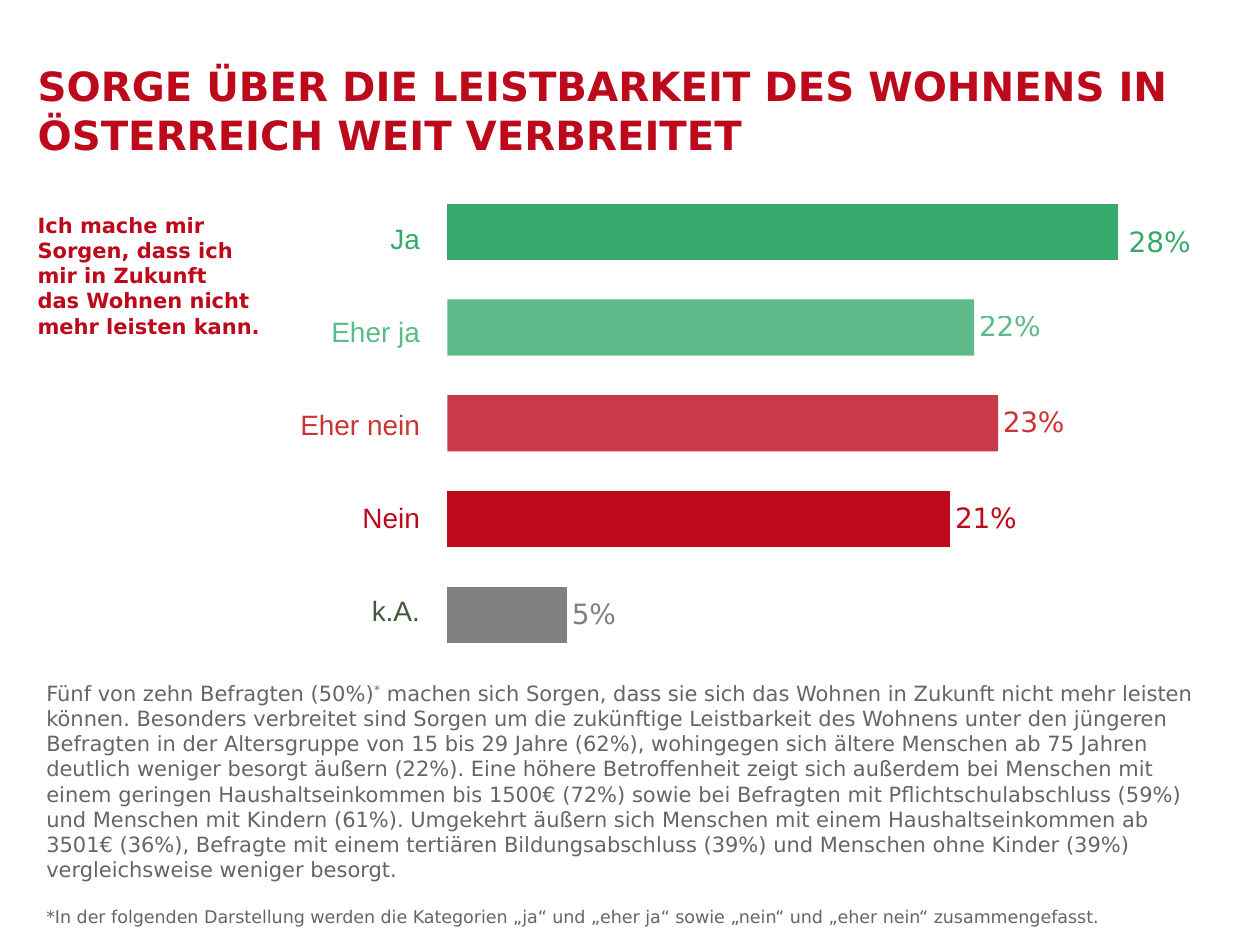
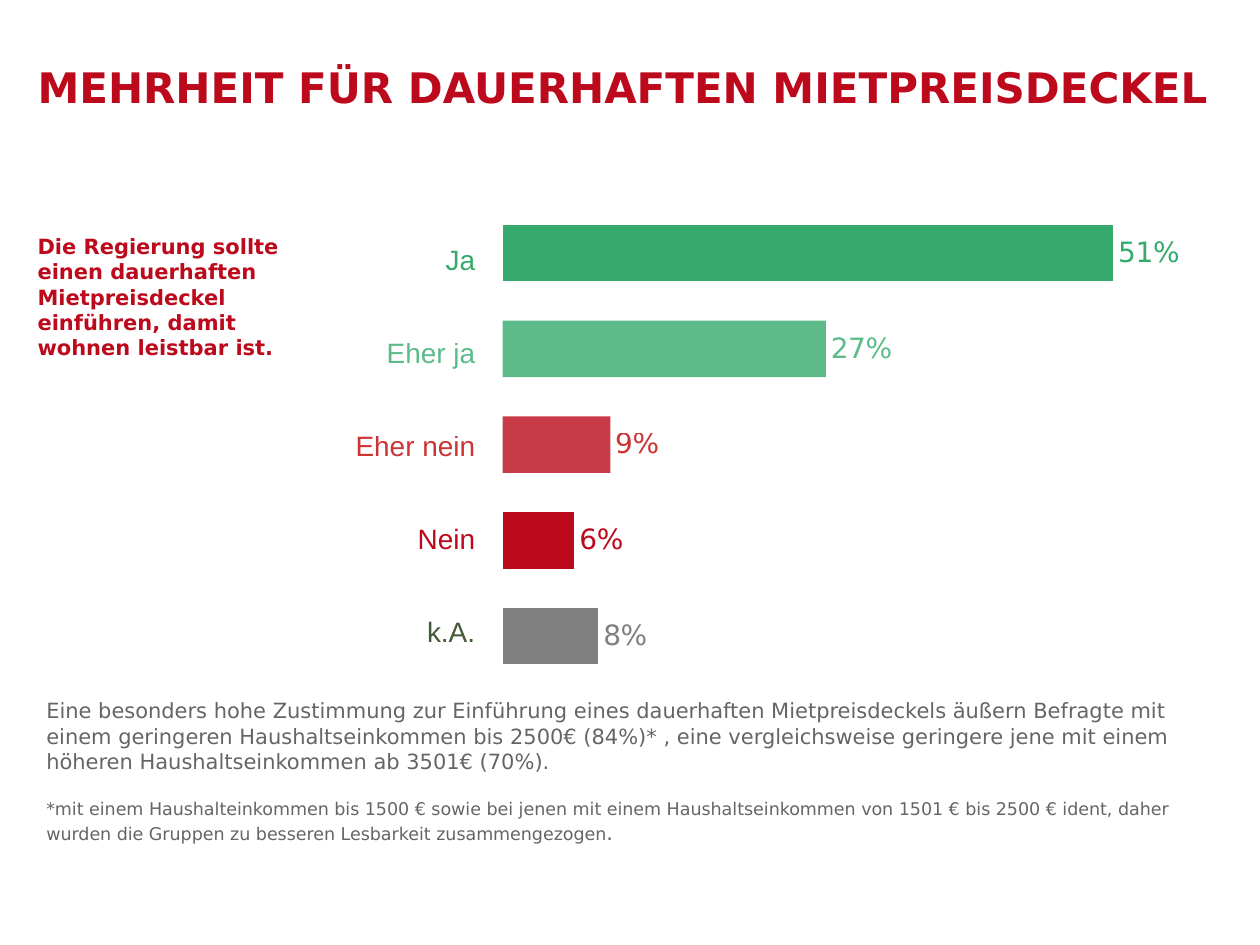
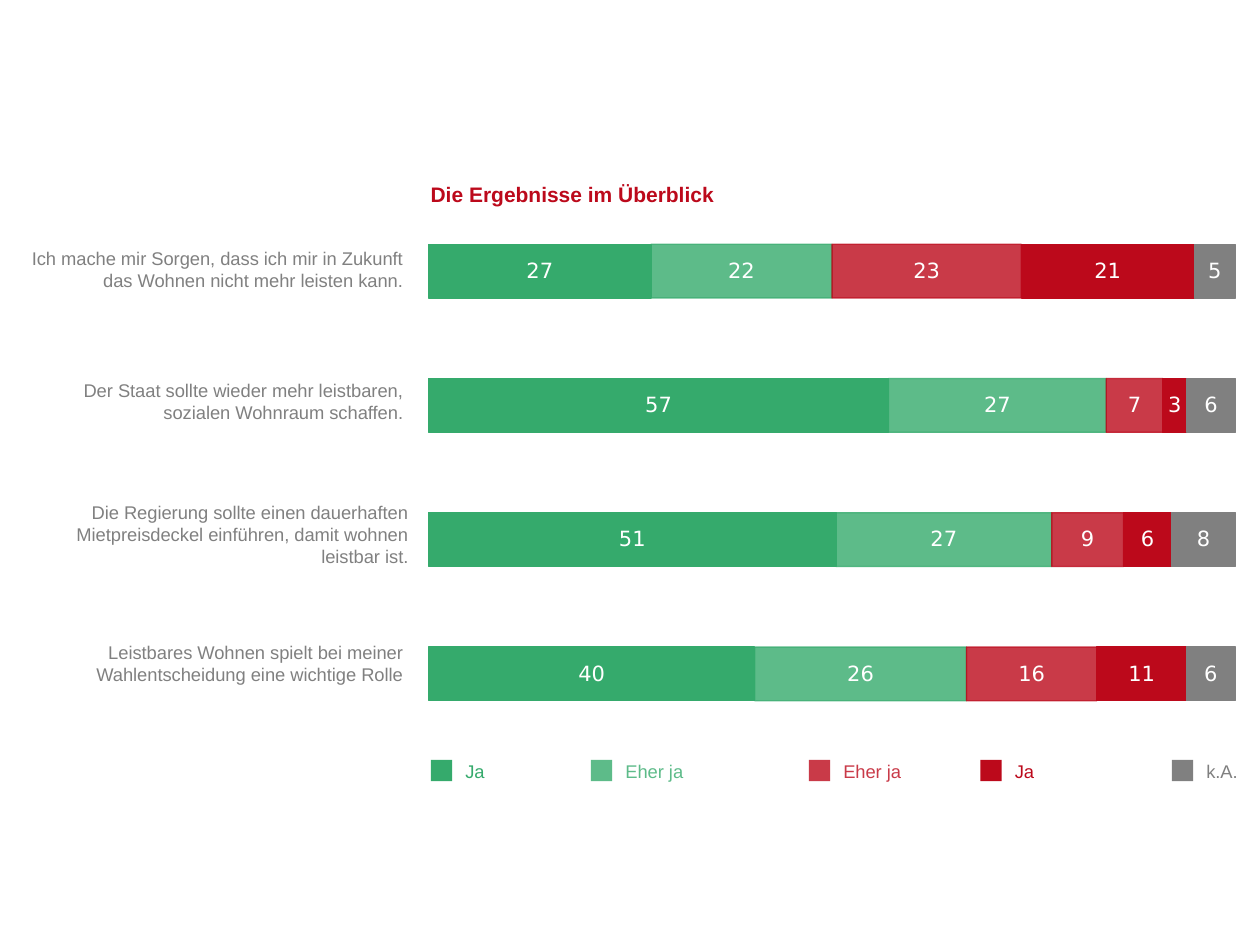
from dataclasses import dataclass
from typing import NamedTuple

from lxml import etree
from pptx import Presentation
from pptx.chart.chart import Chart
from pptx.chart.data import CategoryChartData
from pptx.dml.color import RGBColor
from pptx.dml.fill import FillFormat
from pptx.enum.chart import XL_CHART_TYPE, XL_LABEL_POSITION
from pptx.enum.shapes import MSO_SHAPE
from pptx.enum.text import MSO_AUTO_SIZE, PP_ALIGN
from pptx.oxml.ns import qn
from pptx.slide import Slide
from pptx.text.text import Font
from pptx.util import Pt

CLUSTERED = XL_CHART_TYPE.BAR_CLUSTERED
STACKED = XL_CHART_TYPE.BAR_STACKED_100
OUTSIDE = XL_LABEL_POSITION.OUTSIDE_END
CENTER = XL_LABEL_POSITION.CENTER
RECTANGLE = MSO_SHAPE.RECTANGLE
FIT_SHAPE = MSO_AUTO_SIZE.SHAPE_TO_FIT_TEXT
LEFT = PP_ALIGN.LEFT
RIGHT = PP_ALIGN.RIGHT

SANS = "DejaVu Sans"
ARIAL = "Arial"


class Tone(NamedTuple):
    color: RGBColor
    opacity: int = 100


RED = RGBColor(0xBC, 0x09, 0x1B)
GREEN = RGBColor(0x35, 0xAA, 0x6C)

YES = Tone(GREEN)
RATHER_YES = Tone(GREEN, 80)
RATHER_NO = Tone(RED, 80)
RATHER_NO_TEXT = Tone(RGBColor(0xC0, 0x00, 0x00), 80)
NO = Tone(RED)
NO_ANSWER = Tone(RGBColor(0x80, 0x80, 0x80))
NO_ANSWER_TEXT = Tone(RGBColor(0x42, 0x5A, 0x38))
BODY = Tone(RGBColor(0x64, 0x65, 0x67))
WHITE = Tone(RGBColor(0xFF, 0xFF, 0xFF))

ANSWER_TONES = [YES, RATHER_YES, RATHER_NO, NO, NO_ANSWER]
BAR_LABEL_TONES = [YES, RATHER_YES, RATHER_NO_TEXT, NO, NO_ANSWER]


class Box(NamedTuple):
    x: float
    y: float
    w: float
    h: float

    def lengths(self) -> list[Pt]:
        return [Pt(v) for v in self]


class Run(NamedTuple):
    text: str
    size: float = 12
    tone: Tone = BODY
    bold: bool = False
    font: str = SANS
    raised: bool = False


@dataclass
class Question:
    title: str
    title_size: float
    title_box: Box
    statement: list[str]
    statement_width: float
    chart_box: Box
    shares: list[float]
    axis_max: float
    body_top: float
    body: list[list[Run]]
    labelled: int = 5


class Statement(NamedTuple):
    lines: list[str]
    x: float
    y: float
    shares: list[int]


class LegendKey(NamedTuple):
    text: str
    x: float
    tone: Tone


SCALE = [
    [Run(text, 16, tone, font=ARIAL)]
    for text, tone in [
        ("Ja", YES),
        ("Eher ja", RATHER_YES),
        ("Eher nein", RATHER_NO_TEXT),
        ("Nein", NO),
        ("k.A.", NO_ANSWER_TEXT),
    ]
]

QUESTIONS = [
    Question(
        "SORGE ÜBER DIE LEISTBARKEIT DES WOHNENS IN ÖSTERREICH WEIT VERBREITET",
        23,
        Box(14.4, 31.7, 714.2, 63.4),
        ["Ich mache mir Sorgen, dass ich mir in Zukunft",
         "das Wohnen nicht mehr leisten kann."],
        148.3,
        Box(247, 99.4, 427.7, 285.1),
        [0.28, 0.22, 0.23, 0.21, 0.05],
        0.3,
        385.2,
        [
            [
                Run("Fünf von zehn Befragten (50%)"),
                Run("*", raised=True),
                Run(" machen sich Sorgen, dass sie sich das Wohnen in Zukunft nicht mehr "
                    "leisten können. Besonders verbreitet sind Sorgen um die zukünftige "
                    "Leistbarkeit des Wohnens unter den jüngeren Befragten in der "
                    "Altersgruppe von 15 bis 29 Jahre (62%), wohingegen sich ältere "
                    "Menschen ab 75 Jahren deutlich weniger besorgt äußern (22%). Eine "
                    "höhere Betroffenheit zeigt sich außerdem bei Menschen mit einem "
                    "geringen Haushaltseinkommen bis 1500€ (72%) sowie bei Befragten mit "
                    "Pflichtschulabschluss (59%) und Menschen mit Kindern (61%). Umgekehrt "
                    "äußern sich Menschen mit einem Haushaltseinkommen ab 3501€ (36%), "
                    "Befragte mit einem tertiären Bildungsabschluss (39%) und Menschen "
                    "ohne Kinder (39%) vergleichsweise weniger besorgt."),
            ],
            [Run("*In der folgenden Darstellung werden die Kategorien „ja“ und „eher ja“ "
                 "sowie „nein“ und „eher nein“ zusammengefasst.", 10)],
        ],
        4,
    ),
    Question(
        "MEHRHEIT FÜR DAUERHAFTEN MIETPREISDECKEL",
        24,
        Box(14.4, 31.7, 737.3, 36),
        ["Die Regierung sollte einen dauerhaften",
         "Mietpreisdeckel einführen, damit wohnen leistbar ist."],
        175.7,
        Box(278.6, 111.6, 427.7, 285.1),
        [0.51, 0.27, 0.09, 0.06, 0.08],
        0.6,
        395.3,
        [
            [Run("Eine besonders hohe Zustimmung zur Einführung eines dauerhaften "
                 "Mietpreisdeckels äußern Befragte mit einem geringeren "
                 "Haushaltseinkommen bis 2500€ (84%)* , eine vergleichsweise geringere "
                 "jene mit einem höheren Haushaltseinkommen ab 3501€ (70%).")],
            [
                Run("*mit einem Haushalteinkommen bis 1500 € sowie bei jenen mit einem "
                    "Haushaltseinkommen von 1501 € bis 2500 € ident, daher wurden die "
                    "Gruppen zu besseren Lesbarkeit zusammengezogen", 10),
                Run("."),
            ],
        ],
    ),
]

STATEMENTS = [
    Statement(["Ich mache mir Sorgen, dass ich mir in Zukunft",
               "das Wohnen nicht mehr leisten kann."],
              1.4, 137.5, [27, 22, 23, 21, 5]),
    Statement(["Der Staat sollte wieder mehr leistbaren,",
               "sozialen Wohnraum schaffen."],
              1.4, 213.1, [57, 27, 7, 3, 6]),
    Statement(["Die Regierung sollte einen dauerhaften",
               "Mietpreisdeckel einführen, damit wohnen",
               "leistbar ist."],
              4.3, 283, [51, 27, 9, 6, 8]),
    Statement(["Leistbares Wohnen spielt bei meiner",
               "Wahlentscheidung eine wichtige Rolle"],
              1.4, 362.9, [40, 26, 16, 11, 6]),
]

LEGEND = [
    LegendKey("Ja", 246.2, YES),
    LegendKey("Eher ja", 337.7, RATHER_YES),
    LegendKey("Eher ja", 462.2, RATHER_NO),
    LegendKey("Ja", 560.2, NO),
    LegendKey("k.A.", 669.6, NO_ANSWER),
]


def paint(fill: FillFormat, tone: Tone) -> None:
    fill.solid()
    fill.fore_color.rgb = tone.color
    if tone.opacity < 100:
        color = fill._xPr.find(qn("a:solidFill"))[0]
        etree.SubElement(color, qn("a:alpha")).set("val", str(tone.opacity * 1000))


def style_font(font: Font, size: float, tone: Tone, name: str = SANS) -> None:
    font.size = Pt(size)
    font.name = name
    paint(font.fill, tone)


def add_text(
    s: Slide,
    box: Box,
    paragraphs: list[list[Run]],
    align: PP_ALIGN = LEFT,
    before: float = 0,
    after: float = 0,
    grow: bool = True,
) -> None:
    tf = s.shapes.add_textbox(*box.lengths()).text_frame
    tf.word_wrap = True
    if grow:
        tf.auto_size = FIT_SHAPE
    for i, runs in enumerate(paragraphs):
        p = tf.paragraphs[0] if i == 0 else tf.add_paragraph()
        p.alignment = align
        p.space_before = Pt(before * runs[0].size)
        p.space_after = Pt(after)
        for run in runs:
            r = p.add_run()
            r.text = run.text
            style_font(r.font, run.size, run.tone, run.font)
            r.font.bold = run.bold
            if run.raised:
                r._r.get_or_add_rPr().set("baseline", "30000")


def add_bar_chart(
    s: Slide, box: Box, kind: XL_CHART_TYPE, series: list[list[float]], fmt: str, gap: int
) -> Chart:
    data = CategoryChartData(number_format=fmt)
    data.categories = [str(i + 1) for i in range(len(series[0]))]
    for i, values in enumerate(series, 1):
        data.add_series(f"Series {i}", values)
    chart = s.shapes.add_chart(kind, *box.lengths(), data).chart
    chart.has_title = False
    chart.has_legend = False
    style_font(chart.font, 10, NO)
    chart.value_axis.has_major_gridlines = False
    for axis in (chart.category_axis, chart.value_axis):
        axis.visible = False
    plot = chart.plots[0]
    plot.gap_width = gap
    plot.vary_by_categories = False
    fill_frame(chart)
    return chart


def fill_frame(chart: Chart) -> None:
    area = chart._chartSpace.chart.plotArea
    for old in area.findall(qn("c:layout")):
        area.remove(old)
    layout = etree.Element(qn("c:layout"))
    area.insert(0, layout)
    manual = etree.SubElement(layout, qn("c:manualLayout"))
    for tag, value in [
        ("layoutTarget", "inner"),
        ("xMode", "edge"),
        ("yMode", "edge"),
        ("x", "0.02"),
        ("y", "0.02"),
        ("w", "0.96"),
        ("h", "0.96"),
    ]:
        etree.SubElement(manual, qn(f"c:{tag}")).set("val", value)


def add_answer_chart(s: Slide, q: Question) -> None:
    chart = add_bar_chart(s, q.chart_box, CLUSTERED, [q.shares[::-1]], "0%", 70)
    chart.value_axis.minimum_scale = 0
    chart.value_axis.maximum_scale = q.axis_max
    series = chart.plots[0].series[0]
    series.invert_if_negative = False
    paint(series.format.fill, NO)
    series.data_labels.show_value = False
    bars = zip(ANSWER_TONES[::-1], BAR_LABEL_TONES[::-1])
    for i, (tone, label_tone) in enumerate(bars):
        point = series.points[i]
        paint(point.format.fill, tone)
        if i < q.labelled:
            style_font(point.data_label.font, 16, label_tone)
            point.data_label.position = OUTSIDE


def add_question(s: Slide, q: Question) -> None:
    chart = q.chart_box
    add_text(s, q.title_box, [[Run(q.title, q.title_size, NO, True)]])
    add_text(s, Box(19.4, q.body_top, 681.1, 154.8), q.body,
             before=0.2, after=12, grow=False)
    add_answer_chart(s, q)
    add_text(s, Box(14.4, chart.y + 18.4, q.statement_width, 79.9),
             [[Run(line, 12, NO, True)] for line in q.statement])
    add_text(s, Box(chart.x - 205.2, chart.y + 23.4, 205.2, 241.2), SCALE, RIGHT, after=34)
    if q.labelled < len(q.shares):
        add_text(s, Box(637.9, 124.6, 148.3, 26.6), [[Run(f"{q.shares[0]:.0%}", 16, YES)]])


def add_overview(s: Slide) -> None:
    columns = [list(c) for c in zip(*(st.shares for st in reversed(STATEMENTS)))]
    chart = add_bar_chart(s, Box(235.4, 110.2, 480.2, 319.7), STACKED, columns, "0", 150)
    chart.plots[0].overlap = 100
    for series, tone in zip(chart.plots[0].series, ANSWER_TONES):
        series.invert_if_negative = False
        paint(series.format.fill, tone)
        paint(series.format.line.fill, tone)
        series.format.line.width = Pt(0.75)
        labels = series.data_labels
        labels.show_value = True
        labels.number_format = "0"
        labels.number_format_is_linked = False
        labels.position = CENTER
        style_font(labels.font, 12, WHITE)
    for st in STATEMENTS:
        add_text(s, Box(st.x, st.y, 236.2, 7.2 + 12.6 * len(st.lines)),
                 [[Run(line, 10.5, NO_ANSWER, font=ARIAL)] for line in st.lines], RIGHT)
    for key in LEGEND:
        sp = s.shapes.add_shape(RECTANGLE, *Box(key.x, 434.2, 12.2, 12.2).lengths())
        sp.shadow.inherit = False
        sp.line.fill.background()
        paint(sp.fill, key.tone)
        add_text(s, Box(key.x + 12.6, 430.6, 51.1, 20.2),
                 [[Run(key.text, 10.5, key.tone, font=ARIAL)]])
    add_text(s, Box(239, 100.1, 339.8, 21.6),
             [[Run("Die Ergebnisse im Überblick", 12, NO, True, ARIAL)]])


def main() -> None:
    prs = Presentation()
    prs.slide_width, prs.slide_height = Pt(720), Pt(540)
    blank = prs.slide_layouts[6]
    for question in QUESTIONS:
        add_question(prs.slides.add_slide(blank), question)
    add_overview(prs.slides.add_slide(blank))
    prs.save("out.pptx")


if __name__ == "__main__":
    main()
